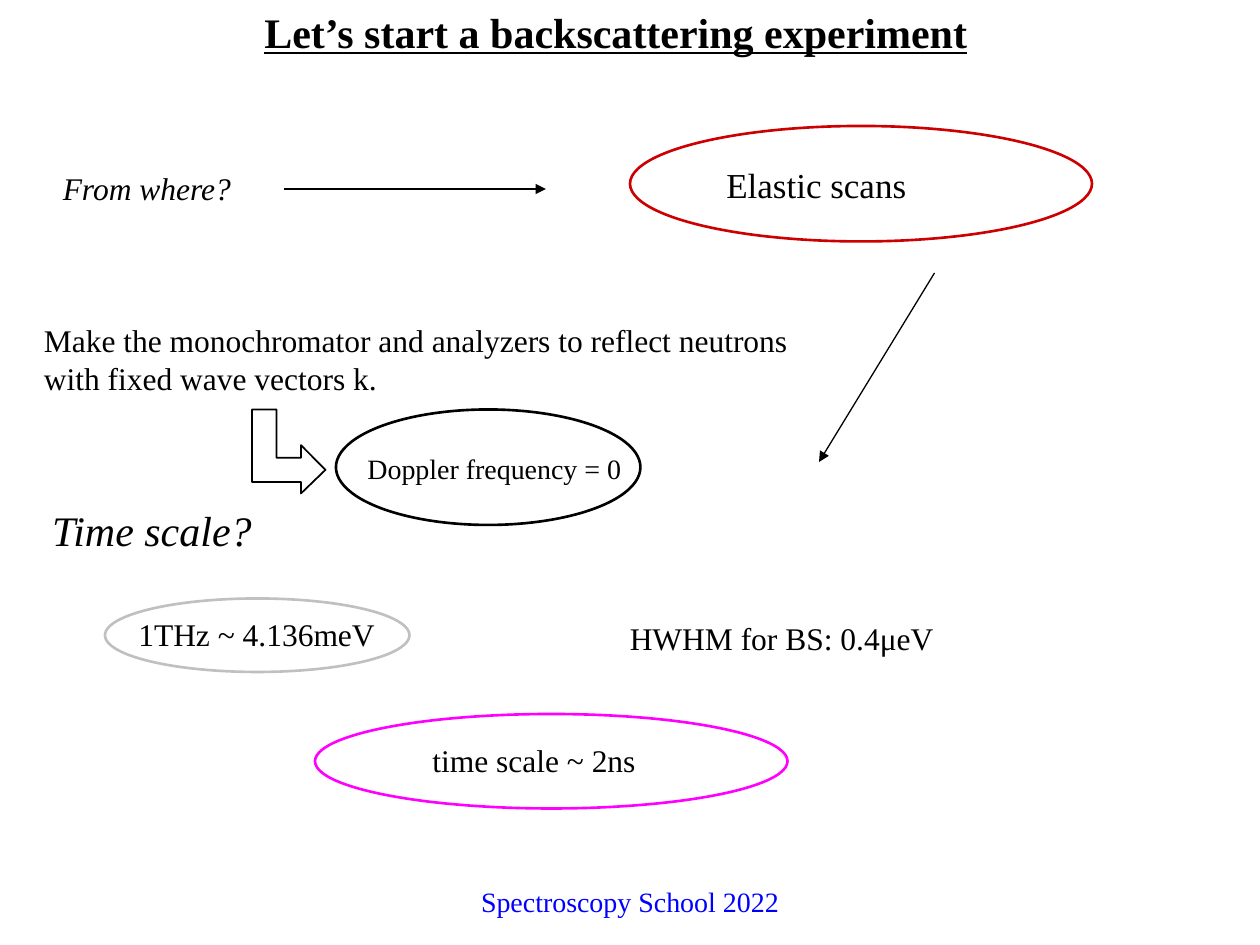
from pptx import Presentation
from pptx.dml.color import RGBColor
from pptx.enum.shapes import MSO_CONNECTOR, MSO_SHAPE
from pptx.enum.text import MSO_ANCHOR, MSO_AUTO_SIZE, PP_ALIGN
from pptx.oxml.ns import qn
from pptx.util import Inches, Pt
from lxml.etree import SubElement

COLORS = {
    "black": "000000",
    "red": "CC0000",
    "gray": "C0C0C0",
    "pink": "FF00FF",
    "blue": "0000FF",
}
FONT = "Times New Roman"
COLS, ROWS = 120, 90


def color(name):
    return RGBColor.from_string(COLORS[name])


class Deck:
    """Draws on the current slide; all lengths are grid columns and rows."""

    def __init__(self):
        self.prs = Presentation()
        self.prs.slide_width, self.prs.slide_height = Inches(10), Inches(7.5)
        self.shapes = self.prs.slides.add_slide(self.prs.slide_layouts[6]).shapes

    def x(self, col):
        return round(self.prs.slide_width * col / COLS)

    def y(self, row):
        return round(self.prs.slide_height * row / ROWS)

    def box(self, col, row, wide, high):
        return self.x(col), self.y(row), self.x(wide), self.y(high)

    def text(self, words, area, size=18, ink="black", bold=False,
             italic=False, under=False, inset=True):
        shape = self.shapes.add_textbox(*self.box(*area))
        frame = shape.text_frame
        frame.word_wrap = False
        frame.auto_size = MSO_AUTO_SIZE.SHAPE_TO_FIT_TEXT
        if not inset:
            frame.margin_left = frame.margin_right = 0
            frame.margin_top = frame.margin_bottom = 0
        frame.text = words
        for para in frame.paragraphs:
            font = para.font
            font.name, font.size = FONT, Pt(size)
            font.bold, font.italic, font.underline = bold, italic, under
            font.color.rgb = color(ink)
        return frame

    def footer(self, words, area):
        frame = self.text(words, area, size=16, ink="blue")
        frame.word_wrap = True
        frame.auto_size = MSO_AUTO_SIZE.NONE
        frame.vertical_anchor = MSO_ANCHOR.MIDDLE
        frame.paragraphs[0].alignment = PP_ALIGN.CENTER

    def outline(self, shape, ink, width):
        shape.shadow.inherit = False
        shape.fill.background()
        shape.line.color.rgb = color(ink)
        shape.line.width = Pt(width)

    def oval(self, area, ink):
        shape = self.shapes.add_shape(MSO_SHAPE.OVAL, *self.box(*area))
        self.outline(shape, ink, 1.5)

    def arrow(self, start, end, width):
        link = self.shapes.add_connector(
            MSO_CONNECTOR.STRAIGHT, self.x(start[0]), self.y(start[1]),
            self.x(end[0]), self.y(end[1]))
        link.line.color.rgb = color("black")
        link.line.width = Pt(width)
        SubElement(link.line._get_or_add_ln(), qn("a:tailEnd"), type="triangle")
        SubElement(link._element.spPr, qn("a:effectLst"))

    def bent(self, points):
        """Outline a closed polygon, such as a bent block arrow."""
        dots = [(self.x(col), self.y(row)) for col, row in points]
        path = self.shapes.build_freeform(*dots[0])
        path.add_line_segments(dots[1:], close=True)
        self.outline(path.convert_to_shape(), "black", 1)


def main():
    deck = Deck()
    deck.text("Let’s start a backscattering experiment", (24, 0, 70, 6),
              size=24, bold=True, under=True)

    deck.text("From where?", (4.8, 15.5, 18.7, 4.8), italic=True)
    deck.arrow((27, 18), (52, 18), 1.5)
    deck.oval((60, 12, 44, 11), "red")
    deck.text("Elastic scans", (68, 15, 19.7, 5.3), size=20)

    deck.text("Make the monochromator and analyzers to reflect neutrons\n"
              "with fixed wave vectors k.", (3, 30, 74, 8.4))
    deck.arrow((89, 26), (78, 44), 0.75)

    deck.text("Time scale?", (3.8, 47.5, 21.6, 6), size=24, italic=True)
    deck.text("1THz ~ 4.136meV", (12, 58, 25, 4.8))
    deck.oval((10, 57, 29, 7), "gray")
    deck.text("HWHM for BS: 0.4μeV", (58.8, 58.4, 31.4, 4.8))
    deck.oval((30, 68, 45, 9), "pink")
    deck.text("time scale ~ 2ns", (40, 70, 22, 4.8))

    deck.oval((32, 39, 29, 11), "black")
    deck.text("Doppler frequency = 0", (35, 43, 24.2, 3.2), size=16,
              inset=False)
    deck.bent([(31, 44.75), (28.67, 42.4), (28.67, 43.6), (26.33, 43.6),
               (26.33, 39), (24, 39), (24, 45.9), (28.67, 45.9),
               (28.67, 47)])

    deck.footer("Spectroscopy School 2022", (41, 83.4, 38, 4.8))
    deck.prs.save("out.pptx")


if __name__ == "__main__":
    main()
